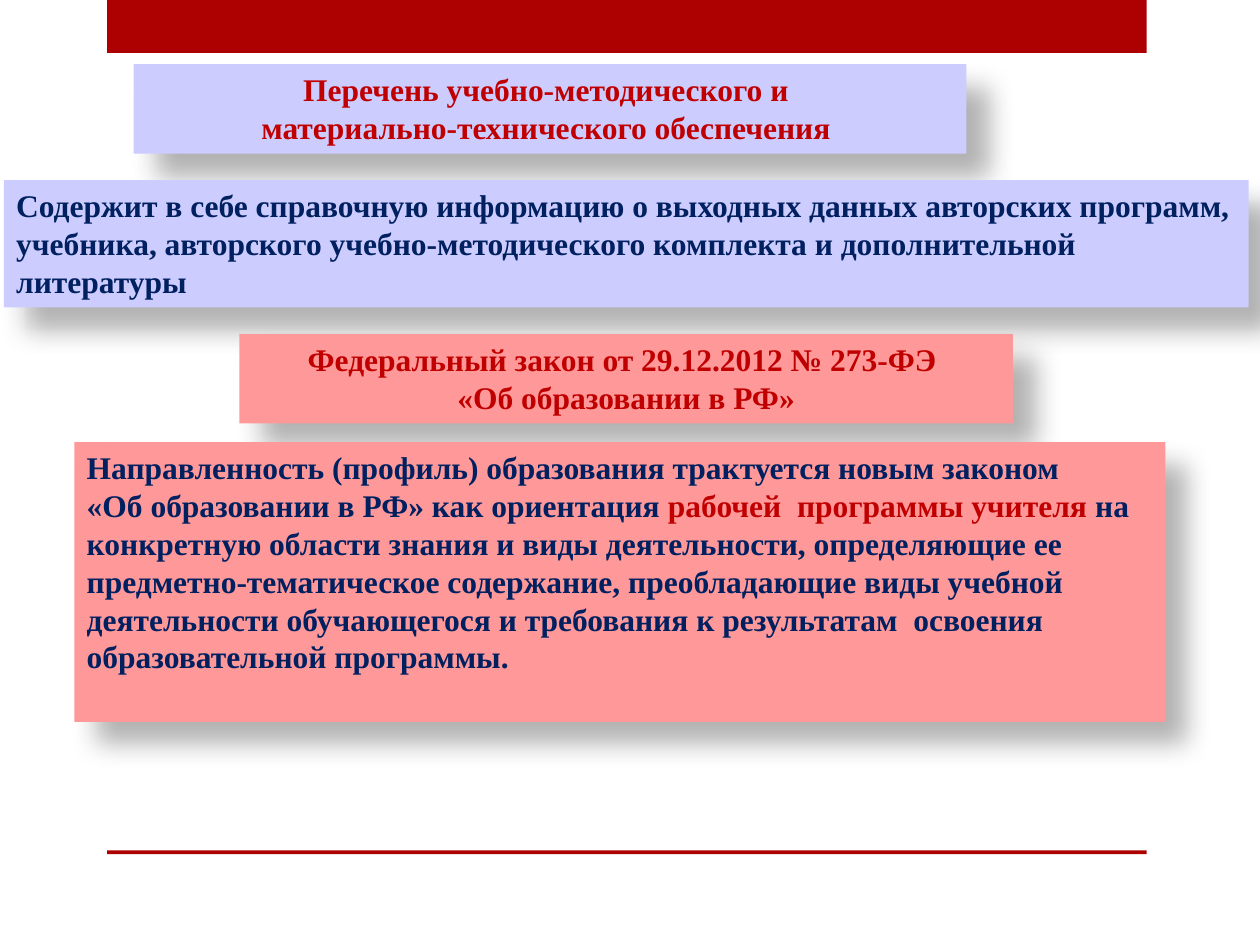
import pptx
import pptx.dml.color
import pptx.enum.shapes
import pptx.enum.text
import pptx.oxml
import pptx.oxml.ns
import pptx.util

SCALE = 9144


class Theme:
    bar = "AD0101"
    lilac = "CCCCFF"
    pink = "FF9999"
    red = "C00000"
    navy = "002060"
    font = "Times New Roman"
    size = 18
    blur = 15
    dist = 18
    angle = 45
    alpha = 30


def px(n):
    return pptx.util.Emu(n * SCALE)


def rgb(code):
    return pptx.dml.color.RGBColor.from_string(code)


class Deck:
    def __init__(self, theme, wide, high):
        self.theme = theme
        self.file = pptx.Presentation()
        self.file.slide_width = px(wide)
        self.file.slide_height = px(high)
        self.slide = self.file.slides.add_slide(self.file.slide_layouts[6])

    def rect(self, box, fill):
        kind = pptx.enum.shapes.MSO_SHAPE.RECTANGLE
        shape = self.slide.shapes.add_shape(kind, *map(px, box))
        shape.shadow.inherit = False
        shape.fill.solid()
        shape.fill.fore_color.rgb = rgb(fill)
        shape.line.fill.background()
        return shape

    def shade(self, shape):
        look = self.theme
        effects = shape._element.spPr.find(pptx.oxml.ns.qn("a:effectLst"))
        effects.append(pptx.oxml.parse_xml(
            f'<a:outerShdw {pptx.oxml.ns.nsdecls("a")} blurRad="{look.blur * 12700}" '
            f'dist="{look.dist * 12700}" dir="{look.angle * 60000}" algn="tl" rotWithShape="0">'
            f'<a:srgbClr val="000000"><a:alpha val="{look.alpha * 1000}"/></a:srgbClr>'
            '</a:outerShdw>'))

    def panel(self, box, fill, color, lines, center=False, accent=None):
        shape = self.rect(box, fill)
        self.shade(shape)
        frame = shape.text_frame
        frame.word_wrap = True
        frame.vertical_anchor = pptx.enum.text.MSO_ANCHOR.TOP
        align = pptx.enum.text.PP_ALIGN
        for i, parts in enumerate(lines):
            para = frame.add_paragraph() if i else frame.paragraphs[0]
            para.alignment = align.CENTER if center else align.LEFT
            para.text = parts[0]
            for part in parts[1:]:
                para.add_run().text = part
            for run in para.runs:
                font = run.font
                font.name = self.theme.font
                font.size = pptx.util.Pt(self.theme.size)
                font.bold = True
                font.color.rgb = rgb(accent if run.text == ACCENT else color)

    def save(self):
        self.file.save("out.pptx")


ACCENT = "рабочей  программы учителя"


def main():
    theme = Theme()
    deck = Deck(theme, 1000, 750)
    for top, high in ((0, 42), (675, 3)):
        deck.rect((85, top, 825, high), theme.bar)

    deck.panel((106, 51, 661, 71), theme.lilac, theme.red, [
        ["Перечень учебно-методического и "],
        ["материально-технического обеспечения "],
    ], center=True)
    deck.panel((3, 143, 988, 101), theme.lilac, theme.navy, [
        ["Содержит в себе справочную информацию о выходных данных авторских программ, "
         "учебника, авторского учебно-методического комплекта и дополнительной литературы"],
    ])
    deck.panel((190, 265, 614, 71), theme.pink, theme.red, [
        ["Федеральный закон от 29.12.2012 № 273-ФЭ "],
        ["«Об образовании в РФ»"],
    ], center=True)
    deck.panel((59, 351, 866, 222), theme.pink, theme.navy, [
        ["Направленность (профиль) образования трактуется новым законом"],
        ["«Об образовании в РФ» как ориентация ", ACCENT,
         " на конкретную области знания и виды деятельности, определяющие ее "
         "предметно-тематическое содержание, преобладающие виды учебной деятельности "
         "обучающегося и требования к результатам  освоения образовательной программы."],
    ], accent=theme.red)
    deck.save()


if __name__ == "__main__":
    main()
